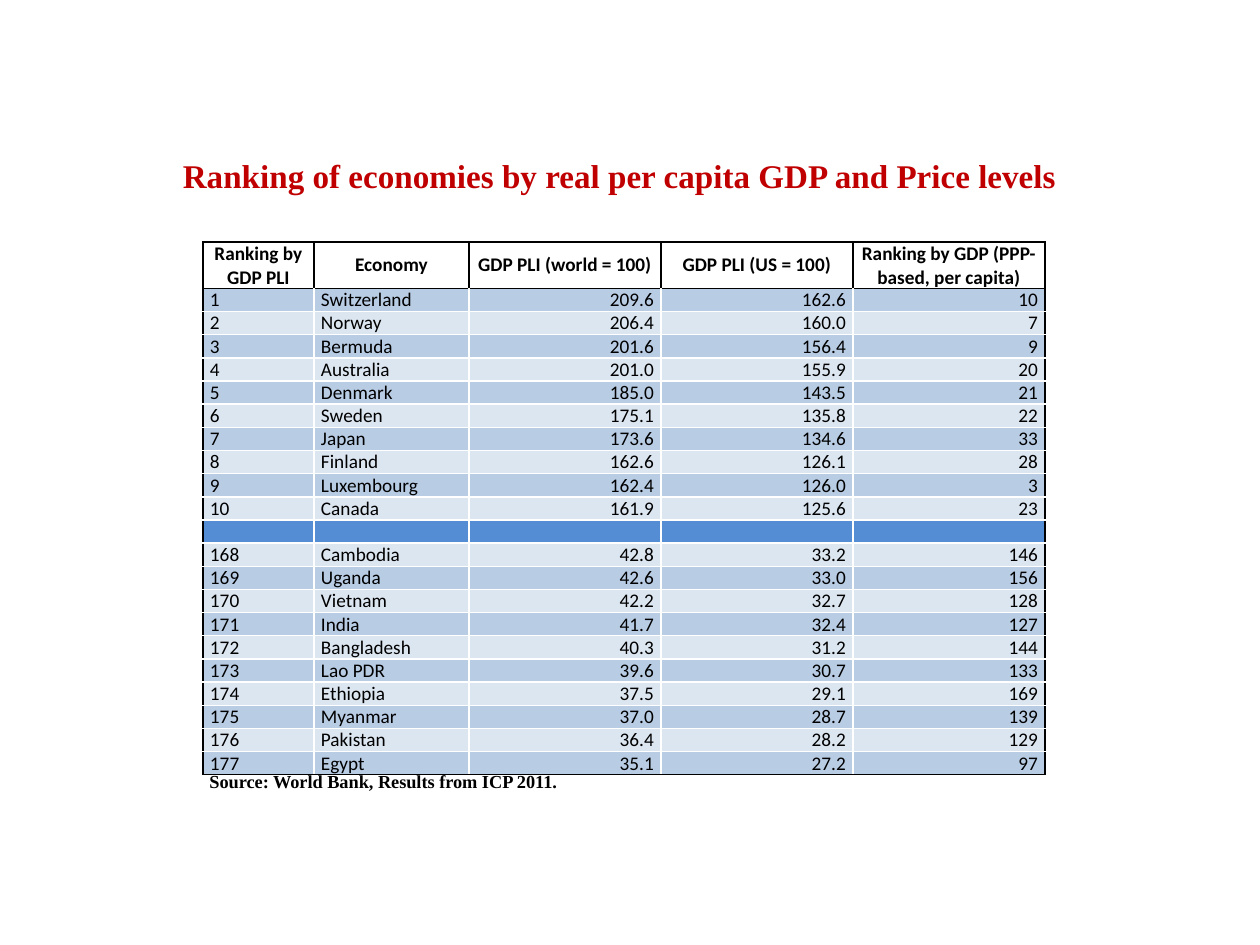
import pptx
import pptx.util
import pptx.dml.color
import pptx.enum.text
from lxml import etree
from pptx.oxml.ns import qn

TITLE = "Ranking of economies by real per capita GDP and Price levels"
SOURCE = "Source: World Bank, Results from ICP 2011."
HEADER = ("Ranking by GDP PLI", "Economy", "GDP PLI (world = 100)",
          "GDP PLI (US = 100)", "Ranking by GDP (PPP-based, per capita)")
TOP = [
    ("1", "Switzerland", "209.6", "162.6", "10"),
    ("2", "Norway", "206.4", "160.0", "7"),
    ("3", "Bermuda", "201.6", "156.4", "9"),
    ("4", "Australia", "201.0", "155.9", "20"),
    ("5", "Denmark", "185.0", "143.5", "21"),
    ("6", "Sweden", "175.1", "135.8", "22"),
    ("7", "Japan", "173.6", "134.6", "33"),
    ("8", "Finland", "162.6", "126.1", "28"),
    ("9", "Luxembourg", "162.4", "126.0", "3"),
    ("10", "Canada", "161.9", "125.6", "23"),
]
BOTTOM = [
    ("168", "Cambodia", "42.8", "33.2", "146"),
    ("169", "Uganda", "42.6", "33.0", "156"),
    ("170", "Vietnam", "42.2", "32.7", "128"),
    ("171", "India", "41.7", "32.4", "127"),
    ("172", "Bangladesh", "40.3", "31.2", "144"),
    ("173", "Lao PDR", "39.6", "30.7", "133"),
    ("174", "Ethiopia", "37.5", "29.1", "169"),
    ("175", "Myanmar", "37.0", "28.7", "139"),
    ("176", "Pakistan", "36.4", "28.2", "129"),
    ("177", "Egypt", "35.1", "27.2", "97"),
]
ROWS = [HEADER, *TOP, ("",) * len(HEADER), *BOTTOM]
GAP_ROW = len(TOP) + 1

THEME = {
    "title": {"name": "Times New Roman", "size": 18.9, "bold": True, "color": "C00000"},
    "source": {"name": "Times New Roman", "size": 10.5, "bold": True, "color": "000000"},
    "header": {"name": "Calibri", "size": 11, "bold": True, "color": "000000"},
    "body": {"name": "Calibri", "size": 11, "bold": False, "color": "000000"},
    "bands": ("DCE6F1", "B8CCE4"),
    "gap": "548DD4",
    "frame": "000000",
    "grid": "FFFFFF",
}

ALIGN = pptx.enum.text.PP_ALIGN
ANCHOR = pptx.enum.text.MSO_ANCHOR
COL_W = (111, 155, 192, 192, 192)
HEADER_H, ROW_H = 46, 23
TABLE_X, TABLE_Y = 203, 242


def px(n):
    return pptx.util.Emu(round(n * 914400 / 126))


def rgb(code):
    return pptx.dml.color.RGBColor.from_string(code)


def write(tf, text, style, align=ALIGN.LEFT):
    p = tf.paragraphs[0]
    p.alignment = align
    if not text:
        etree.SubElement(p._p, qn("a:endParaRPr"), sz=str(style["size"] * 100))
        return
    r = p.add_run()
    r.text = text
    for key, value in {"name": style["name"], "bold": style["bold"],
                       "size": pptx.util.Pt(style["size"])}.items():
        setattr(r.font, key, value)
    r.font.color.rgb = rgb(style["color"])


def place(shape, left, top, width, height):
    for key, value in zip(("left", "top", "width", "height"), (left, top, width, height)):
        setattr(shape, key, px(value))


def set_borders(cell, colors):
    tcPr = cell._tc.get_or_add_tcPr()
    for side, color in zip("LRTB", colors):
        ln = etree.SubElement(tcPr, qn(f"a:ln{side}"), w="12700")
        fill = etree.SubElement(ln, qn("a:solidFill"))
        etree.SubElement(fill, qn("a:srgbClr"), val=color)


def format_cell(cell, i, j):
    for key, value in {"margin_left": px(7), "margin_right": px(7), "margin_top": 0,
                       "margin_bottom": 0, "vertical_anchor": ANCHOR.MIDDLE}.items():
        setattr(cell, key, value)
    head = i == 0
    framed = (head or j == 0, head or j == len(COL_W) - 1, i <= 1, head or i == len(ROWS) - 1)
    set_borders(cell, [THEME["frame" if f else "grid"] for f in framed])
    if head:
        cell.fill.background()
    else:
        cell.fill.solid()
        cell.fill.fore_color.rgb = rgb(THEME["gap"] if i == GAP_ROW else THEME["bands"][i % 2])
    align = ALIGN.CENTER if head else ALIGN.LEFT if j < 2 else ALIGN.RIGHT
    write(cell.text_frame, ROWS[i][j], THEME["header" if head else "body"], align)


def add_ranking(s):
    height = HEADER_H + ROW_H * (len(ROWS) - 1)
    table = s.shapes.add_table(len(ROWS), len(COL_W), px(TABLE_X), px(TABLE_Y),
                               px(sum(COL_W)), px(height)).table
    for col, width in zip(table.columns, COL_W):
        col.width = px(width)
    for i, row in enumerate(table.rows):
        row.height = px(ROW_H if i else HEADER_H)
        for j, cell in enumerate(row.cells):
            format_cell(cell, i, j)


def main():
    prs = pptx.Presentation()
    prs.slide_width, prs.slide_height = px(1260), px(945)
    s = prs.slides.add_slide(prs.slide_layouts[5])

    title = s.shapes.title
    place(title, 166, 146, 908, 73)
    for key, value in {"margin_left": px(9), "margin_right": px(9), "margin_top": px(9),
                       "margin_bottom": px(5), "vertical_anchor": ANCHOR.TOP,
                       "auto_size": pptx.enum.text.MSO_AUTO_SIZE.NONE}.items():
        setattr(title.text_frame, key, value)
    write(title.text_frame, TITLE, THEME["title"], ALIGN.CENTER)

    source = s.shapes.add_textbox(px(197), px(764), px(699), px(35))
    source.text_frame.word_wrap = True
    write(source.text_frame, SOURCE, THEME["source"])

    add_ranking(s)
    prs.save("out.pptx")


if __name__ == "__main__":
    main()
